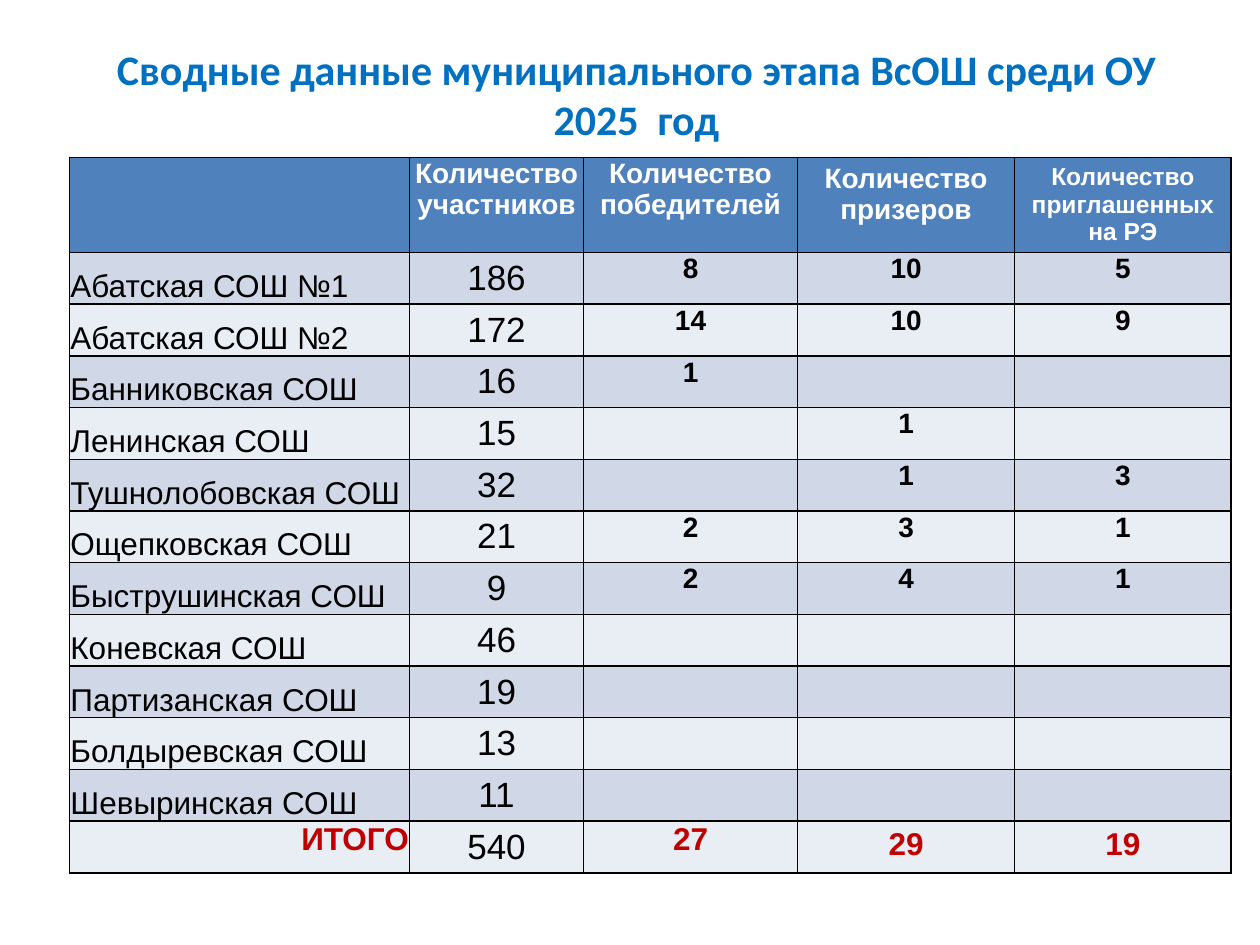
from lxml.etree import SubElement
from pptx import Presentation
from pptx.dml.color import RGBColor
from pptx.enum.text import MSO_ANCHOR as Anchor, PP_ALIGN as Align
from pptx.oxml.ns import qn
from pptx.util import Cm, Pt

COLORS = {
    "title": "0070C0",
    "header": "4F81BD",
    "header_text": "FFFFFF",
    "odd": "D0D8E8",
    "even": "E9EDF4",
    "text": "000000",
    "total": "C00000",
    "border": "000000",
}

TITLE = "Сводные данные муниципального этапа ВсОШ среди ОУ\v2025  год"
HEADERS = ["", "Количество участников", "Количество победителей",
           "Количество призеров", "Количество приглашенных на РЭ"]
# School, participants, winners, prize-winners, invited to the regional stage
SCHOOLS = [
    ("Абатская СОШ №1", 186, 8, 10, 5),
    ("Абатская СОШ №2", 172, 14, 10, 9),
    ("Банниковская СОШ", 16, 1, "", ""),
    ("Ленинская СОШ", 15, "", 1, ""),
    ("Тушнолобовская СОШ", 32, "", 1, 3),
    ("Ощепковская СОШ", 21, 2, 3, 1),
    ("Быструшинская СОШ", 9, 2, 4, 1),
    ("Коневская СОШ", 46, "", "", ""),
    ("Партизанская СОШ", 19, "", "", ""),
    ("Болдыревская СОШ", 13, "", "", ""),
    ("Шевыринская СОШ", 11, "", "", ""),
]
TOTALS = ("ИТОГО", 540, 27, 29, 19)
COLUMN_WIDTHS = [6.86, 3.5, 4.32, 4.37, 4.37]
ROW_HEIGHT = 1.04


def write(frame, text, size=18, color="text", bold=False, font="Arial", align=Align.CENTER):
    para = frame.paragraphs[0]
    para.text = str(text)
    para.alignment = align
    for span in para.runs:
        span.font.size = Pt(size)
        span.font.name = font
        span.font.bold = bold
        span.font.color.rgb = RGBColor.from_string(COLORS[color])


def add_borders(cell):
    properties = cell._tc.get_or_add_tcPr()
    for index, side in enumerate(("a:lnL", "a:lnR", "a:lnT", "a:lnB")):
        line = SubElement(properties, qn(side), w=str(Pt(1)))
        fill = SubElement(line, qn("a:solidFill"))
        SubElement(fill, qn("a:srgbClr"), val=COLORS["border"])
        properties.remove(line)
        properties.insert(index, line)  # borders precede the fill


def fill_cell(cell, text, fill, tight=False, anchor=Anchor.TOP, **style):
    cell.fill.solid()
    cell.fill.fore_color.rgb = RGBColor.from_string(COLORS[fill])
    add_borders(cell)
    if text == "":
        return
    cell.vertical_anchor = anchor
    if tight:
        cell.margin_left = cell.margin_right = cell.margin_top = Cm(0.02)
        cell.margin_bottom = 0
    write(cell.text_frame, text, **style)


def add_title(slide, left, top, width, height):
    title = slide.shapes.title
    title.left, title.top, title.width, title.height = left, top, width, height
    title.text_frame.vertical_anchor = Anchor.MIDDLE
    write(title.text_frame, TITLE, size=24, color="title", bold=True, font="Calibri")


def add_results(slide, left, top, width, height):
    rows = len(SCHOOLS) + 2
    frame = slide.shapes.add_table(rows, len(HEADERS), left, top, width, height)
    table = frame.table
    for column, column_width in zip(table.columns, COLUMN_WIDTHS):
        column.width = Cm(column_width)
    for row in table.rows:
        row.height = Cm(ROW_HEIGHT)
    frame.height = height

    # Header row
    for column, text in enumerate(HEADERS):
        fill_cell(table.cell(0, column), text, "header", tight=column < 3,
                  size=14 if column == 4 else 16, color="header_text", bold=True)

    # One banded row per school
    name_style = dict(tight=True, anchor=Anchor.BOTTOM, align=Align.LEFT)
    count_style = dict(size=20)
    award_style = dict(tight=True, size=16, bold=True)
    styles = [name_style, count_style] + [award_style] * 3
    for row, school in enumerate(SCHOOLS, start=1):
        band = "odd" if row % 2 else "even"
        for column, (value, style) in enumerate(zip(school, styles)):
            fill_cell(table.cell(row, column), value, band, **style)

    # Totals row
    total_style = dict(color="total", bold=True)
    styles = [dict(total_style, tight=True, align=Align.RIGHT), count_style,
              dict(total_style, tight=True), total_style, total_style]
    for column, (value, style) in enumerate(zip(TOTALS, styles)):
        fill_cell(table.cell(rows - 1, column), value, "even", **style)


def main():
    deck = Presentation()
    deck.slide_width, deck.slide_height = Cm(25.4), Cm(19.05)
    page = deck.slides.add_slide(deck.slide_layouts[5])
    add_results(page, Cm(1.4), Cm(3.17), Cm(sum(COLUMN_WIDTHS)), Cm(15.24))
    add_title(page, Cm(1.4), Cm(0.58), Cm(22.86), Cm(2.62))
    deck.save("out.pptx")


if __name__ == "__main__":
    main()
